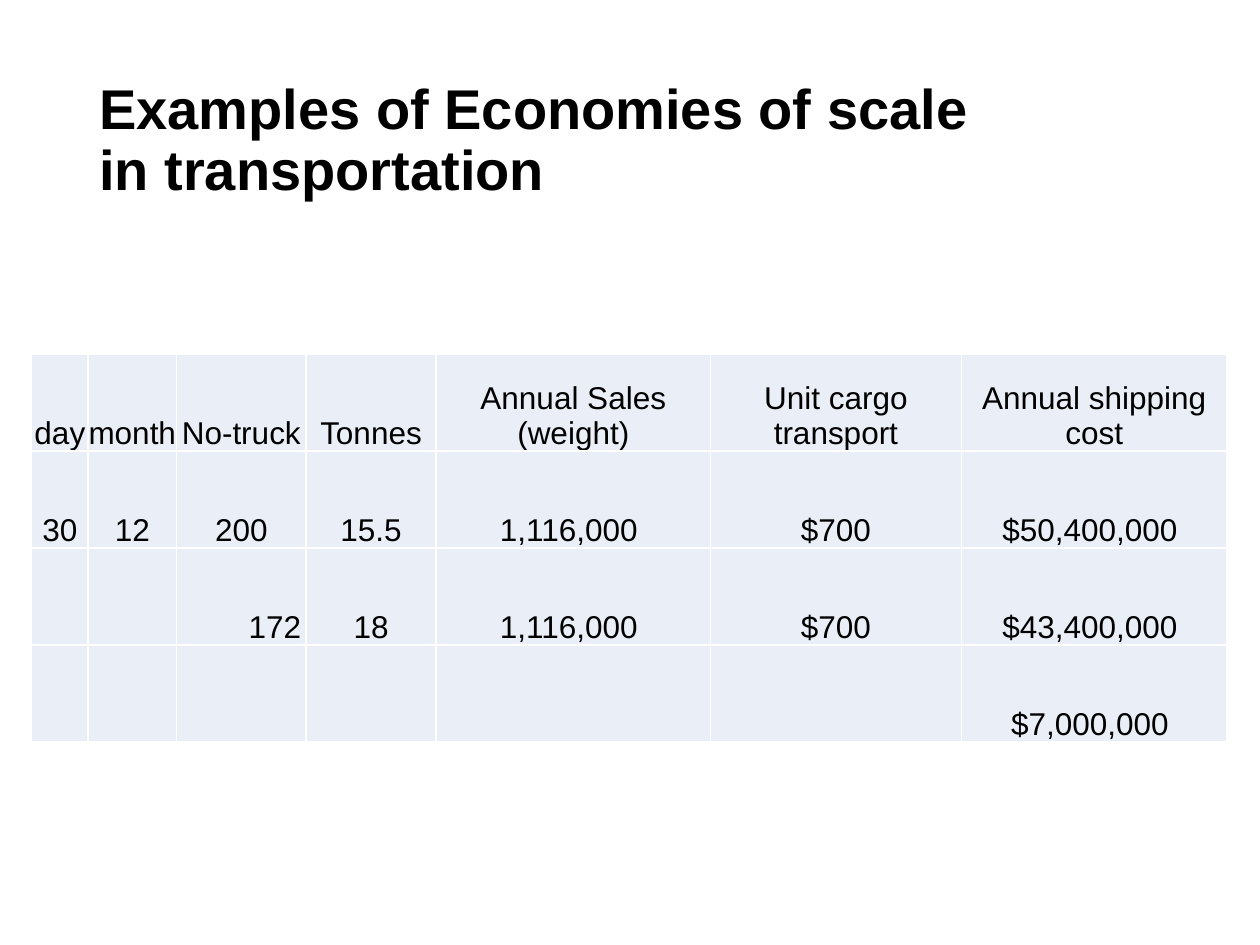
"""Build a slide with a table on economies of scale in transportation."""
from dataclasses import dataclass

from lxml import etree
from pptx import Presentation
from pptx.dml.color import RGBColor
from pptx.enum.text import MSO_ANCHOR, PP_ALIGN
from pptx.oxml.ns import qn
from pptx.util import Inches, Pt

MIDDLE, BOTTOM = MSO_ANCHOR.MIDDLE, MSO_ANCHOR.BOTTOM
CENTER, RIGHT = PP_ALIGN.CENTER, PP_ALIGN.RIGHT


@dataclass(frozen=True)
class Theme:
    font: str = "Arial"
    ink: str = "000000"
    cell: str = "EAEFF7"
    border: str = "FFFFFF"
    title_size: int = 32
    table_size: int = 18
    border_width: int = 1


class SlideBuilder:
    def __init__(self, slide, theme):
        self.slide = slide
        self.theme = theme

    def set_font(self, paragraph, size, bold=False):
        font = paragraph.font
        font.name, font.size, font.bold = self.theme.font, Pt(size), bold
        font.color.rgb = RGBColor.from_string(self.theme.ink)

    def title(self, text, left, top, width, height):
        frame = self.slide.shapes.add_textbox(
            Inches(left), Inches(top), Inches(width), Inches(height)).text_frame
        frame.word_wrap = True
        frame.vertical_anchor = MIDDLE
        heading = frame.paragraphs[0]
        heading.text = text
        heading.line_spacing = 0.9
        self.set_font(heading, self.theme.title_size, bold=True)

    def borders(self, cell):
        properties = cell._tc.get_or_add_tcPr()
        for position, side in enumerate(("a:lnL", "a:lnR", "a:lnT", "a:lnB")):
            line = etree.Element(qn(side), w=str(Pt(self.theme.border_width)))
            fill = etree.SubElement(line, qn("a:solidFill"))
            etree.SubElement(fill, qn("a:srgbClr"), val=self.theme.border)
            properties.insert(position, line)

    def cell(self, cell, text, align, right_inset):
        cell.fill.solid()
        cell.fill.fore_color.rgb = RGBColor.from_string(self.theme.cell)
        cell.margin_left = cell.margin_top = cell.margin_bottom = 0
        cell.margin_right = Inches(right_inset)
        cell.vertical_anchor = BOTTOM
        self.borders(cell)
        entry = cell.text_frame.paragraphs[0]
        entry.text = text
        entry.alignment = align
        self.set_font(entry, self.theme.table_size)

    def table(self, rows, left, top, column_widths, row_height, exceptions):
        table = self.slide.shapes.add_table(
            len(rows), len(column_widths), Inches(left), Inches(top),
            Inches(sum(column_widths)), Inches(row_height * len(rows))).table
        table.first_row = table.horz_banding = False
        for column, width in zip(table.columns, column_widths):
            column.width = Inches(width)
        for r, row in enumerate(rows):
            table.rows[r].height = Inches(row_height)
            for c, text in enumerate(row):
                align, inset = exceptions.get((r, c), (CENTER, 0))
                self.cell(table.cell(r, c), text, align, inset)


def main():
    presentation = Presentation()
    presentation.slide_width, presentation.slide_height = Inches(10), Inches(7.5)
    slide = presentation.slides.add_slide(presentation.slide_layouts[6])
    builder = SlideBuilder(slide, Theme())

    builder.title("Examples of Economies of scale in transportation",
                  0.69, 0.4, 7.55, 1.45)

    shipping = [
        ("day", "month", "No-truck", "Tonnes", "Annual Sales (weight)",
         "Unit cargo transport", "Annual shipping cost"),
        ("30", "12", "200", "15.5", "1,116,000", "$700", "$50,400,000"),
        ("", "", "172", "18", "1,116,000", "$700", "$43,400,000"),
        ("", "", "", "", "", "", "$7,000,000"),
    ]
    amounts = {(r, c): (CENTER, 0.07) for r in (1, 2, 3) for c in (4, 6)}
    builder.table(shipping, 0.25, 2.81,
                  (0.45, 0.7, 1.03, 1.03, 2.18, 1.99, 2.11), 0.77,
                  {**amounts, (2, 2): (RIGHT, 0.04)})

    presentation.save("out.pptx")


if __name__ == "__main__":
    main()
